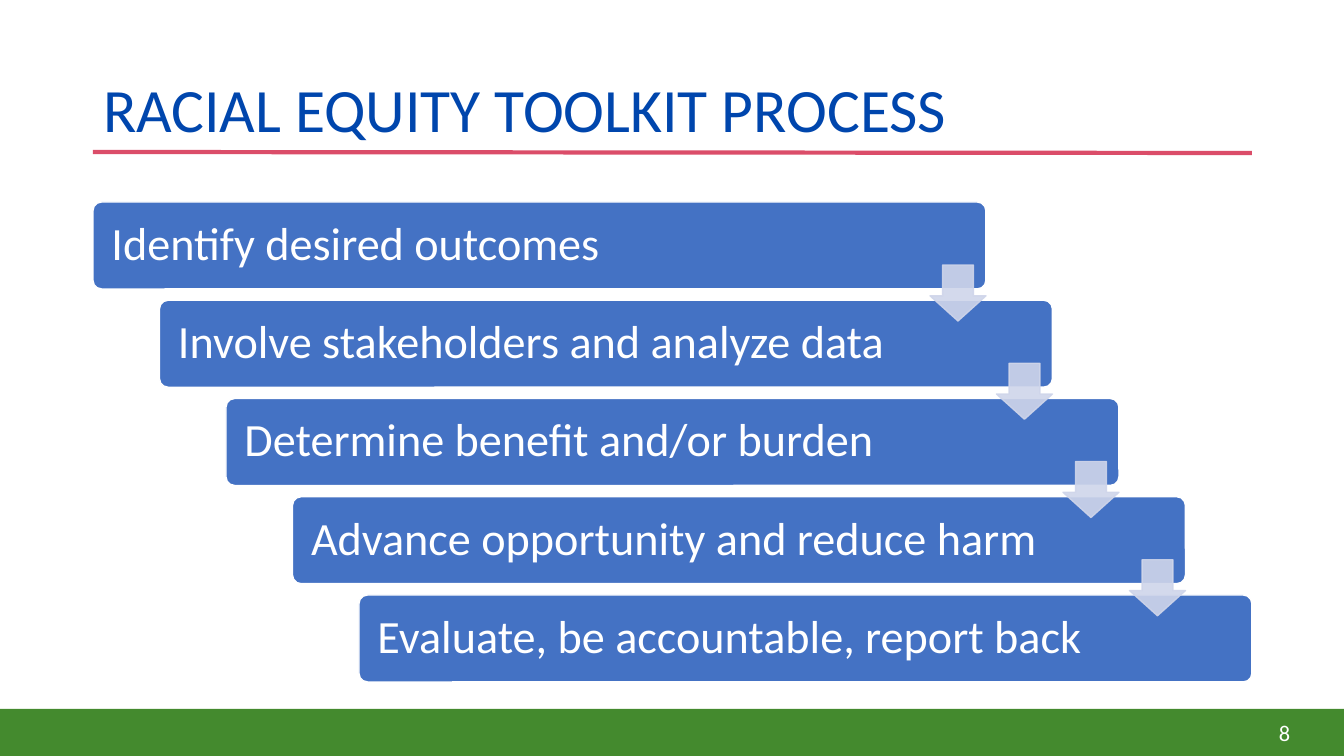
from lxml import etree
from pptx import Presentation
from pptx.dml.color import RGBColor
from pptx.enum.shapes import MSO_CONNECTOR, MSO_SHAPE
from pptx.enum.text import MSO_ANCHOR, PP_ALIGN
from pptx.oxml.ns import qn
from pptx.util import Pt

RECT = MSO_SHAPE.RECTANGLE
ROUND = MSO_SHAPE.ROUNDED_RECTANGLE
ARROW = MSO_SHAPE.DOWN_ARROW
LINE = MSO_CONNECTOR.STRAIGHT
MIDDLE = MSO_ANCHOR.MIDDLE
LEFT, RIGHT = PP_ALIGN.LEFT, PP_ALIGN.RIGHT

WIDE, HIGH = 1344, 756
SCALE = 914400 / 100.8

STEPS = [
    "Identify desired outcomes",
    "Involve stakeholders and analyze data",
    "Determine benefit and/or burden",
    "Advance opportunity and reduce harm",
    "Evaluate, be accountable, report back",
]


def px(n):
    return round(n * SCALE)


def color(code):
    return RGBColor.from_string(code)


def place(shape, box):
    shape.left, shape.top, shape.width, shape.height = map(px, box)


def write(shape, text, size, code, align=LEFT, space=1.0):
    frame = shape.text_frame
    frame.word_wrap = True
    frame.text = text
    para = frame.paragraphs[0]
    para.alignment = align
    para.line_spacing = space
    font = para.runs[0].font
    font.name = "Calibri"
    font.size = Pt(size)
    font.color.rgb = color(code)
    return frame


def draw(slide, kind, box, fill, edge=None):
    shape = slide.shapes.add_shape(kind, *map(px, box))
    shape.shadow.inherit = False
    shape.fill.solid()
    shape.fill.fore_color.rgb = color(fill)
    if edge:
        shape.line.color.rgb = color(edge)
        shape.line.width = Pt(1)
    else:
        shape.line.fill.background()
    return shape


def fade(shape, percent):
    for tint in shape.element.spPr.iter(qn("a:srgbClr")):
        etree.SubElement(tint, qn("a:alpha"), val=str(percent * 1000))


def footer(slide, box):
    x, y, w, h = box
    draw(slide, RECT, box, "448A2E")
    note = slide.shapes.add_textbox(*map(px, (x + w - 141, y + 5, 97, 37)))
    write(note, "8", 16, "FFFFFF", RIGHT)


def header(slide, box):
    x, y, w, h = box
    rule = slide.shapes.add_connector(
        LINE, px(x), px(y + 112), px(x + w), px(y + 113))
    rule.line.color.rgb = color("DB4D69")
    rule.line.width = Pt(3)
    etree.SubElement(rule.element.spPr, qn("a:effectLst"))
    title = slide.shapes.title
    place(title, box)
    frame = write(title, "RACIAL EQUITY TOOLKIT PROCESS", 44, "0046AD", space=0.9)
    frame.vertical_anchor = MIDDLE


def stairs(slide, box):
    x, y, w, h = box
    wide, high, head = 893, 87, 56
    last = len(STEPS) - 1
    spots = [(x + (w - wide) * i / last, y + (h - high) * i / last)
             for i in range(len(STEPS))]
    for (left, top), text in zip(spots, STEPS):
        bar = draw(slide, ROUND, (left, top, wide, high), "4472C4", "FFFFFF")
        bar.adjustments[0] = 0.1
        frame = write(bar, text, 33, "FFFFFF", space=0.9)
        frame.vertical_anchor = MIDDLE
        frame.margin_left = px(16)
    for left, top in spots[:-1]:
        arrow = draw(slide, ARROW, (left + wide - head, top + 63, head, head),
                     "CFD5EA", "CFD5EA")
        arrow.adjustments[0] = 0.55
        arrow.adjustments[1] = 0.45
        fade(arrow, 90)


def main():
    deck = Presentation()
    deck.slide_width, deck.slide_height = px(WIDE), px(HIGH)
    slide = deck.slides.add_slide(deck.slide_layouts[5])
    footer(slide, (0, 709, WIDE, 47))
    header(slide, (93, 40, 1159, 146))
    stairs(slide, (93, 202, 1159, 480))
    deck.save("out.pptx")


if __name__ == "__main__":
    main()
